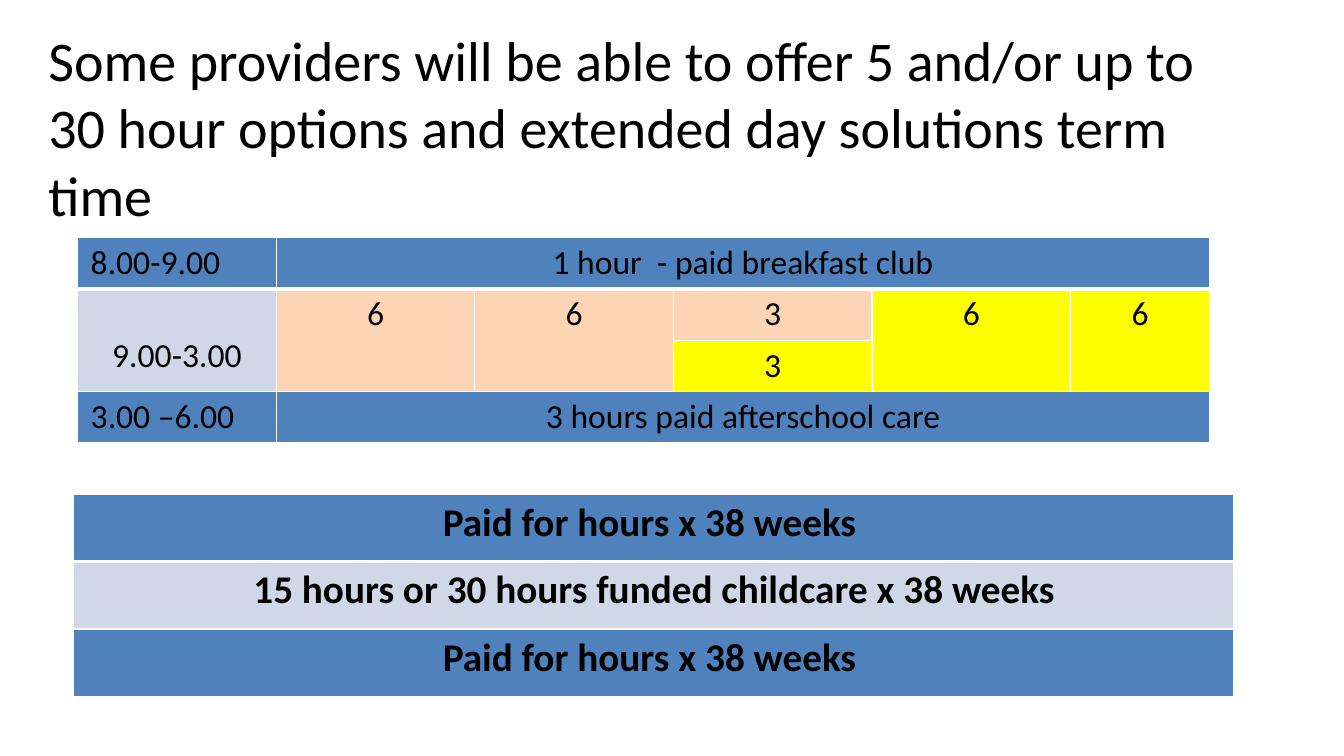
from dataclasses import dataclass

from lxml.etree import SubElement
from pptx import Presentation
from pptx.dml.color import RGBColor
from pptx.enum.text import MSO_ANCHOR, MSO_AUTO_SIZE, PP_ALIGN
from pptx.oxml.ns import qn
from pptx.slide import Slide
from pptx.table import Table, _Cell as Cell
from pptx.text.text import _Paragraph as Paragraph
from pptx.util import Inches, Pt

BLACK = RGBColor(0x00, 0x00, 0x00)
WHITE = RGBColor(0xFF, 0xFF, 0xFF)
BLUE = RGBColor(0x4F, 0x81, 0xBD)
PALE_BLUE = RGBColor(0xD0, 0xD8, 0xE8)
PEACH = RGBColor(0xFC, 0xD5, 0xB5)
YELLOW = RGBColor(0xFF, 0xFF, 0x00)

TITLE = ("Some providers will be able to offer 5 and/or up to 30 hour options "
         "and extended day solutions term time")
CELL_MARGINS = {
    "margin_left": Inches(0.13), "margin_right": Inches(0.13),
    "margin_top": Inches(0.05), "margin_bottom": Inches(0.05),
}


@dataclass
class Entry:
    row: int
    column: int
    text: str
    fill: RGBColor
    rows: int = 1
    columns: int = 1
    align: PP_ALIGN = PP_ALIGN.CENTER
    top: float = 0.05


@dataclass
class Grid:
    left: float
    top: float
    widths: list[float]
    row_height: float
    row_count: int
    size: int
    bold: bool
    entries: list[Entry]


TIMETABLE = Grid(0.77, 2.36, [1.97] * 5 + [1.38], 0.5, 4, 24, False, [
    Entry(0, 0, "8.00-9.00", BLUE, align=PP_ALIGN.LEFT),
    Entry(0, 1, "1 hour  - paid breakfast club", BLUE, columns=5),
    Entry(1, 0, "9.00-3.00", PALE_BLUE, rows=2, top=0.46),
    Entry(1, 1, "6", PEACH, rows=2),
    Entry(1, 2, "6", PEACH, rows=2),
    Entry(1, 3, "3", PEACH),
    Entry(2, 3, "3", YELLOW),
    Entry(1, 4, "6", YELLOW, rows=2),
    Entry(1, 5, "6", YELLOW, rows=2),
    Entry(3, 0, "3.00 –6.00", BLUE, align=PP_ALIGN.LEFT),
    Entry(3, 1, "3 hours paid afterschool care", BLUE, columns=5),
])
FUNDING = Grid(0.73, 4.9, [11.51], 0.67, 3, 28, True, [
    Entry(0, 0, "Paid for hours x 38 weeks ", BLUE),
    Entry(1, 0, "15 hours or 30 hours funded childcare x 38 weeks", PALE_BLUE),
    Entry(2, 0, "Paid for hours x 38 weeks ", BLUE),
])


def apply_format(target: object, values: dict) -> None:
    for name, value in values.items():
        setattr(target, name, value)


def write_text(para: Paragraph, text: str, size: int, bold: bool, align: PP_ALIGN) -> None:
    para.alignment = align
    span = para.add_run()
    span.text = text
    apply_format(span.font, {"name": "Calibri", "size": Pt(size), "bold": bold})
    span.font.color.rgb = BLACK


def add_borders(cell: Cell, row: int) -> None:
    """Draw white borders, thicker below the first row."""
    widths = {"L": 1, "R": 1, "T": 3 if row == 1 else 1, "B": 3 if row == 0 else 1}
    properties = cell._tc.get_or_add_tcPr()
    for side, width in widths.items():
        line = SubElement(properties, qn(f"a:ln{side}"), w=str(Pt(width)))
        SubElement(SubElement(line, qn("a:solidFill")), qn("a:srgbClr"), val=str(WHITE))


def fill_entry(table: Table, grid: Grid, entry: Entry) -> None:
    cell = table.cell(entry.row, entry.column)
    if entry.rows * entry.columns > 1:
        cell.merge(table.cell(entry.row + entry.rows - 1,
                              entry.column + entry.columns - 1))
    apply_format(cell, CELL_MARGINS | {"margin_top": Inches(entry.top)})
    cell.fill.solid()
    cell.fill.fore_color.rgb = entry.fill
    write_text(cell.text_frame.paragraphs[0], entry.text, grid.size, grid.bold, entry.align)


def add_grid(page: Slide, grid: Grid) -> None:
    table = page.shapes.add_table(
        grid.row_count, len(grid.widths), Inches(grid.left), Inches(grid.top),
        Inches(sum(grid.widths)), Inches(grid.row_height * grid.row_count)).table
    for column, width in zip(table.columns, grid.widths):
        column.width = Inches(width)
    for index, row in enumerate(table.rows):
        row.height = Inches(grid.row_height)
        for cell in row.cells:
            add_borders(cell, index)
    for entry in grid.entries:
        fill_entry(table, grid, entry)


def add_title(page: Slide) -> None:
    box = page.shapes.title
    apply_format(box, {"left": Inches(0.38), "top": Inches(0.63),
                       "width": Inches(12), "height": Inches(1.25)})
    apply_format(box.text_frame, {"word_wrap": True, "auto_size": MSO_AUTO_SIZE.NONE,
                                  "vertical_anchor": MSO_ANCHOR.MIDDLE})
    write_text(box.text_frame.paragraphs[0], TITLE, 40, False, PP_ALIGN.LEFT)


def main() -> None:
    deck = Presentation()
    apply_format(deck, {"slide_width": Inches(13.33), "slide_height": Inches(7.5)})
    page = deck.slides.add_slide(deck.slide_layouts.get_by_name("Title Only"))
    add_title(page)
    for grid in (FUNDING, TIMETABLE):
        add_grid(page, grid)
    deck.save("out.pptx")


if __name__ == "__main__":
    main()
